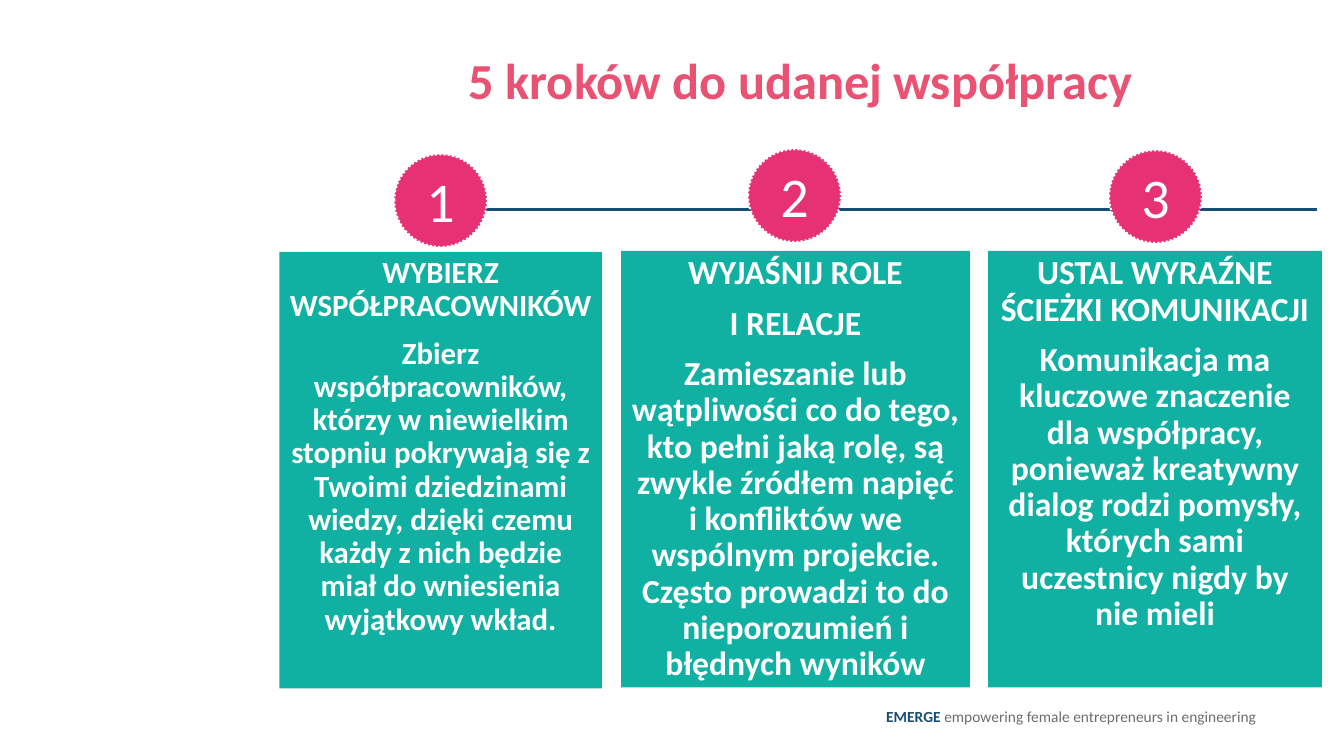
from pptx import Presentation
from pptx.dml.color import RGBColor
from pptx.enum import dml, shapes, text
from pptx.oxml import ns
from pptx.util import Inches, Pt
from lxml import etree

WHITE = RGBColor(0xFF, 0xFF, 0xFF)
NAVY = RGBColor(0x17, 0x4F, 0x72)
GREY = RGBColor(0x6D, 0x6E, 0x6C)
CORAL = RGBColor(0xE9, 0x52, 0x73)
TEAL = RGBColor(0x10, 0xB1, 0xA2)
PINK = RGBColor(0xE6, 0x32, 0x75)

CARD_HEIGHT = 4.33
BADGE_SIZE = 0.92

STEPS = [
    ((2.77, 2.5, 3.2), (3.91, 1.53), 22, [
        "WYBIERZ WSPÓŁPRACOWNIKÓW",
        "Zbierz współpracowników, którzy w niewielkim stopniu pokrywają się z "
        "Twoimi dziedzinami wiedzy, dzięki czemu każdy z nich będzie miał do "
        "wniesienia wyjątkowy wkład."]),
    ((6.16, 2.49, 3.46), (7.42, 1.48), 24, [
        "WYJAŚNIJ ROLE",
        "I RELACJE",
        "Zamieszanie lub wątpliwości co do tego, kto pełni jaką rolę, są zwykle "
        "źródłem napięć i konfliktów we wspólnym projekcie. Często prowadzi to "
        "do nieporozumień i błędnych wyników"]),
    ((9.8, 2.49, 3.31), (11, 1.49), 24, [
        "USTAL WYRAŹNE ŚCIEŻKI KOMUNIKACJI",
        "Komunikacja ma kluczowe znaczenie dla współpracy, ponieważ kreatywny "
        "dialog rodzi pomysły, których sami uczestnicy nigdy by nie mieli"]),
]


def add_run(paragraph, wording, size, color, bold=False):
    run = paragraph.add_run()
    run.text = wording
    run.font.name = "Calibri"
    run.font.size = Pt(size)
    run.font.bold = bold
    run.font.color.rgb = color


def add_label(slide, left, top, width, height, align, runs, spacing=1.0):
    frame = slide.shapes.add_textbox(
        Inches(left), Inches(top), Inches(width), Inches(height)).text_frame
    frame.word_wrap = True
    line = frame.paragraphs[0]
    line.alignment = align
    line.line_spacing = spacing
    for run in runs:
        add_run(line, *run)


def add_timeline(slide):
    timeline = slide.shapes.add_connector(
        shapes.MSO_CONNECTOR.STRAIGHT,
        Inches(13.06), Inches(2.08), Inches(4.12), Inches(2.08))
    timeline.line.color.rgb = NAVY
    timeline.line.width = Pt(2.25)
    etree.SubElement(timeline._element.spPr, ns.qn("a:effectLst"))


def add_filled(slide, preset, left, top, width, height, color):
    shape = slide.shapes.add_shape(
        preset, Inches(left), Inches(top), Inches(width), Inches(height))
    shape.shadow.inherit = False
    shape.fill.solid()
    shape.fill.fore_color.rgb = color
    shape.line.fill.background()
    shape.text_frame.word_wrap = True
    return shape


def add_card(slide, left, top, width, size, wordings):
    card = add_filled(slide, shapes.MSO_SHAPE.RECTANGLE,
                      left, top, width, CARD_HEIGHT, TEAL)
    frame = card.text_frame
    frame.vertical_anchor = text.MSO_ANCHOR.TOP
    for index, wording in enumerate(wordings):
        paragraph = frame.add_paragraph() if index else frame.paragraphs[0]
        paragraph.alignment = text.PP_ALIGN.CENTER
        paragraph.line_spacing = 0.9
        paragraph.space_before = Pt(10 if index else 0)
        add_run(paragraph, wording, size, WHITE, True)


def add_badge(slide, left, top, number):
    badge = add_filled(slide, shapes.MSO_SHAPE.OVAL,
                       left, top, BADGE_SIZE, BADGE_SIZE, PINK)
    badge.line.color.rgb = WHITE
    badge.line.width = Pt(1.5)
    badge.line.dash_style = dml.MSO_LINE.ROUND_DOT
    frame = badge.text_frame
    frame.vertical_anchor = text.MSO_ANCHOR.MIDDLE
    frame.paragraphs[0].alignment = text.PP_ALIGN.CENTER
    add_run(frame.paragraphs[0], str(number), 40, WHITE)


def main():
    deck = Presentation()
    deck.slide_width = Inches(13.33)
    deck.slide_height = Inches(7.5)
    slide = deck.slides.add_slide(deck.slide_layouts[6])

    add_label(slide, 0.31, 6.97, 12.25, 0.45, text.PP_ALIGN.RIGHT, [
        ("EMERGE ", 11, NAVY, True),
        ("empowering female entrepreneurs in engineering", 11, GREY)])
    add_timeline(slide)
    add_label(slide, 4.55, 0.51, 8.1, 0.76, text.PP_ALIGN.LEFT,
              [("5 kroków do udanej współpracy", 36, CORAL, True)], 0.9)
    for number, (card, badge, size, wordings) in enumerate(STEPS, 1):
        add_card(slide, *card, size, wordings)
        add_badge(slide, *badge, number)

    deck.save("out.pptx")


if __name__ == "__main__":
    main()
